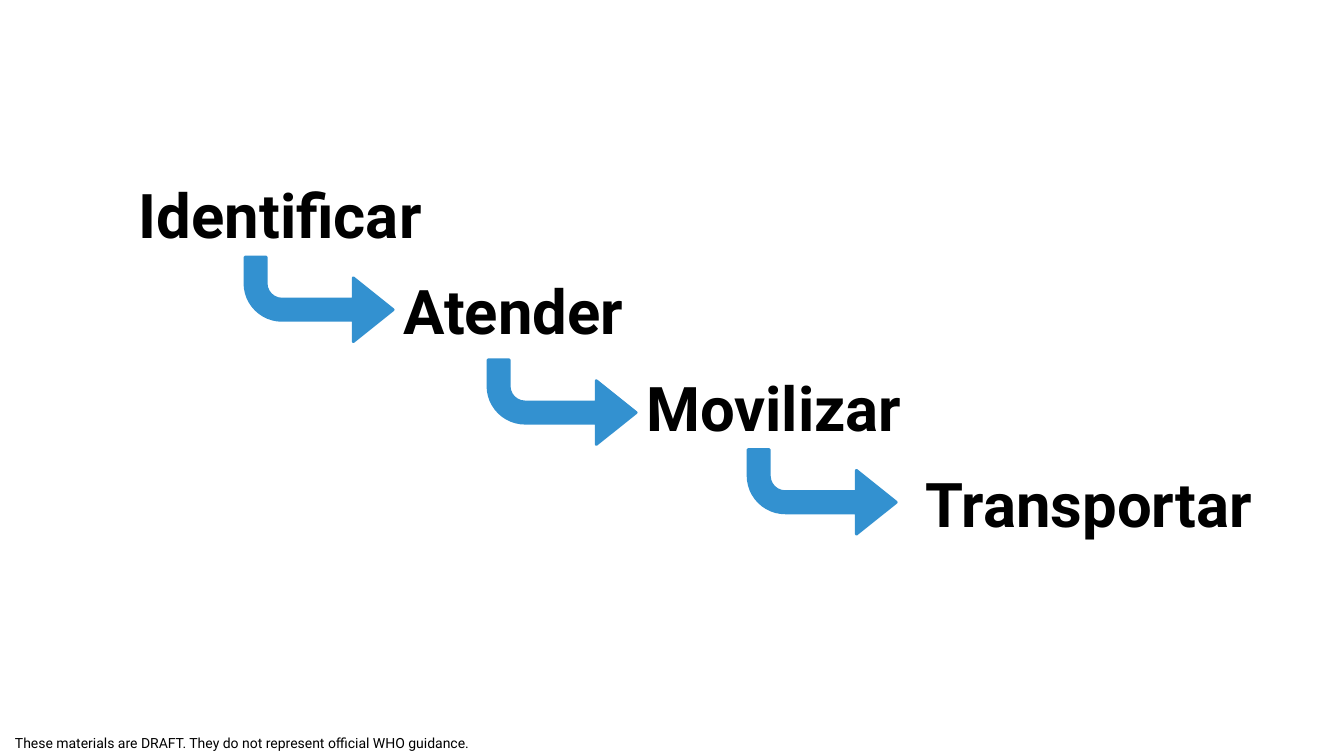
from pptx import Presentation
from pptx import util as u
from pptx.dml.color import RGBColor
from pptx.enum import shapes, text

COLORS = {"paper": "FFFFFF", "ink": "000000", "arrow": "3391D0"}
FONT = "Roboto"
STEPS = [("Identificar", 1.28), ("Atender", 3.9), ("Movilizar", 6.31), ("Transportar", 9.08)]
FIRST_TOP, ROW_PITCH = 1.71, 0.953
STEP_SIZE = (4.81, 0.84)
ARROWS = [(2.43, 2.55), (4.84, 3.57), (7.42, 4.46)]
ARROW_SIZE = (1.47, 0.84)
ARROW_BENDS = (0.25, 0.377, 0.471, 0.438)
NOTICE = "These materials are DRAFT. They do not represent official WHO guidance."
NOTICE_AREA = (0.05, 7.24, 4.75, 0.27)


def color(name):
    return RGBColor.from_string(COLORS[name])


def add_label(page, words, area, size, bold=False):
    box = page.shapes.add_textbox(*map(u.Inches, area))
    frame = box.text_frame
    frame.word_wrap = True
    frame.auto_size = text.MSO_AUTO_SIZE.SHAPE_TO_FIT_TEXT
    span = frame.paragraphs[0].add_run()
    span.text = words
    span.font.name = FONT
    span.font.size = u.Pt(size)
    span.font.bold = bold
    span.font.color.rgb = color("ink")


def add_arrow(page, place):
    arrow = page.shapes.add_shape(
        shapes.MSO_SHAPE.BENT_ARROW, *map(u.Inches, place + ARROW_SIZE))
    arrow.shadow.inherit = False
    for index, bend in enumerate(ARROW_BENDS):
        arrow.adjustments[index] = bend
    arrow.element.spPr.xfrm.set("flipV", "1")
    arrow.fill.solid()
    arrow.fill.fore_color.rgb = color("arrow")
    arrow.line.color.rgb = color("arrow")
    arrow.line.width = u.Pt(2)


def main():
    deck = Presentation()
    deck.slide_width, deck.slide_height = u.Inches(13.33), u.Inches(7.5)
    page = deck.slides.add_slide(deck.slide_layouts[6])
    page.background.fill.solid()
    page.background.fill.fore_color.rgb = color("paper")
    add_label(page, NOTICE, NOTICE_AREA, 10)
    for row, (step, left) in enumerate(STEPS):
        top = FIRST_TOP + row * ROW_PITCH
        add_label(page, step, (left, top) + STEP_SIZE, 44, bold=True)
    for place in ARROWS:
        add_arrow(page, place)
    deck.save("out.pptx")


if __name__ == "__main__":
    main()
